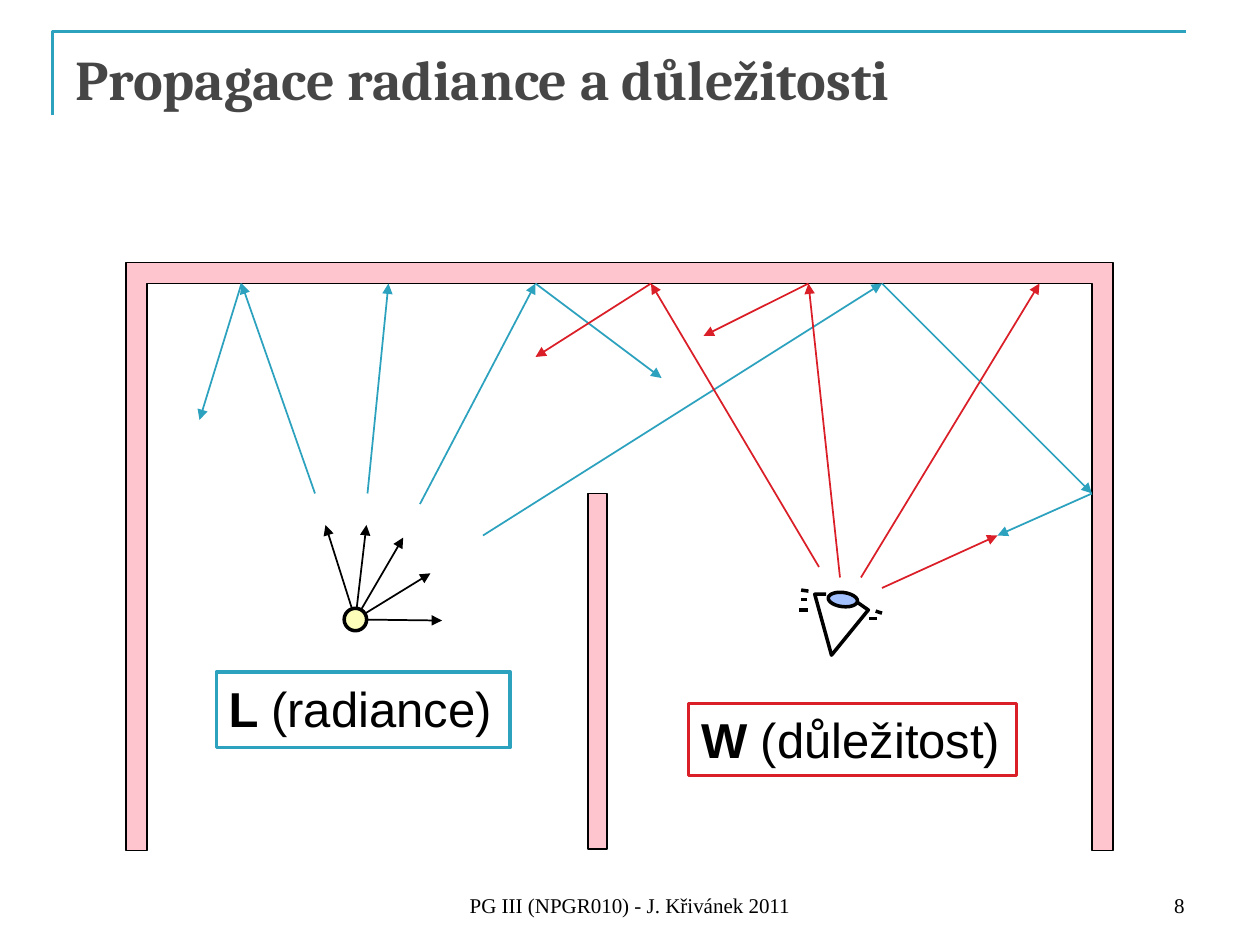
from itertools import pairwise

from lxml.etree import SubElement
from pptx import Presentation
from pptx.dml.color import RGBColor
from pptx.enum.shapes import MSO_CONNECTOR as Connector, MSO_SHAPE as Shape
from pptx.enum.text import MSO_ANCHOR as Anchor, MSO_AUTO_SIZE as AutoSize, PP_ALIGN as Align
from pptx.oxml.ns import qn
from pptx.util import Inches, Pt

COLUMNS, ROWS = 120, 90
WIDTH, HEIGHT = Inches(10), Inches(7.5)
COLORS = {
    "accent": "2DA2BF",
    "importance": "DA1F28",
    "title": "464646",
    "ink": "000000",
    "wall": "FFC5CF",
    "lamp": "FCFEB9",
    "iris": "A2C1FE",
}
RADIANCE_PATHS = [
    [(40, 48), (51, 27), (63, 36)],
    [(35, 47), (37, 27)],
    [(46, 51), (84, 27), (104, 47), (95, 51)],
    [(30, 47), (23, 27), (19, 40)],
]
IMPORTANCE_PATHS = [
    [(82, 55), (99, 27)],
    [(80, 55), (77, 27), (67, 32)],
    [(84, 56), (95, 51)],
    [(78, 54), (62, 27), (51, 34)],
]
ROOM = [(14, 81), (12, 81), (12, 25), (106, 25), (106, 81), (104, 81), (104, 27), (14, 27)]
LAMP = (33.85, 59)
LAMP_TIPS = [(42.1, 59.1), (31, 50), (41, 54.6), (38.4, 51.2), (34.9, 50)]
EYE_CONE = [(78.7, 56.6), (77.6, 56.6), (79.2, 62.4), (82.7, 58.1), (81.7, 57.4)]
EYE_LASHES = [
    [(76.3, 56.2), (77, 56.3)],
    [(76.3, 57.1), (76.9, 57.1)],
    [(76.1, 58.1), (77, 58.1)],
    [(83.4, 58.2), (84, 58.4)],
    [(82.8, 58.9), (83.5, 58.9)],
]


def x(column):
    return round(WIDTH * column / COLUMNS)


def y(row):
    return round(HEIGHT * row / ROWS)


def rgb(name):
    return RGBColor.from_string(COLORS[name])


def paint(figure, fill, line, weight):
    figure.shadow.inherit = False
    if fill:
        figure.fill.solid()
        figure.fill.fore_color.rgb = rgb(fill)
    else:
        figure.fill.background()
    figure.line.color.rgb = rgb(line)
    figure.line.width = Pt(weight)


def add_figure(slide, preset, box, fill, line, weight):
    left, top, width, height = box
    figure = slide.shapes.add_shape(preset, x(left), y(top), x(width), y(height))
    paint(figure, fill, line, weight)
    return figure


def add_outline(slide, points, fill, line, weight, close=False):
    corners = [(x(column), y(row)) for column, row in points]
    builder = slide.shapes.build_freeform(*corners[0])
    builder.add_line_segments(corners[1:], close=close)
    paint(builder.convert_to_shape(), fill, line, weight)


def add_line(slide, start, end, color, weight=1, arrow=True):
    stroke = slide.shapes.add_connector(
        Connector.STRAIGHT, x(start[0]), y(start[1]), x(end[0]), y(end[1])
    )
    stroke.line.color.rgb = rgb(color)
    stroke.line.width = Pt(weight)
    properties = stroke._element.spPr
    if arrow:
        SubElement(properties.find(qn("a:ln")), qn("a:tailEnd"), type="triangle")
    SubElement(properties, qn("a:effectLst"))


def add_paths(slide, paths, color):
    for path in paths:
        for start, end in pairwise(path):
            add_line(slide, start, end, color)


def set_font(paragraph, name, size, color, bold=None):
    font = paragraph.font
    font.name, font.size, font.bold = name, Pt(size), bold
    font.color.rgb = rgb(color)


def add_text(slide, box, text, name, size, color, align=Align.LEFT, anchor=Anchor.TOP, bold=None):
    left, top, width, height = box
    frame = slide.shapes.add_textbox(x(left), y(top), x(width), y(height)).text_frame
    frame.word_wrap = True
    frame.vertical_anchor = anchor
    paragraph = frame.paragraphs[0]
    paragraph.text = text
    paragraph.alignment = align
    set_font(paragraph, name, size, color, bold)


def add_label(slide, box, symbol, meaning, color):
    frame = add_figure(slide, Shape.RECTANGLE, box, None, color, 2).text_frame
    frame.word_wrap = False
    frame.auto_size = AutoSize.SHAPE_TO_FIT_TEXT
    frame.vertical_anchor = Anchor.TOP
    paragraph = frame.paragraphs[0]
    paragraph.alignment = Align.LEFT
    set_font(paragraph, "Arial", 28, "ink")
    for text, bold in ((symbol + " ", True), (meaning, False)):
        run = paragraph.add_run()
        run.text = text
        run.font.bold = bold


def add_eye(slide):
    iris = add_figure(slide, Shape.OVAL, (79.6, 55.7, 1.35, 2.8), "iris", "ink", 2)
    iris.rotation = 277
    add_outline(slide, EYE_CONE, None, "ink", 2)
    for start, end in EYE_LASHES:
        add_line(slide, start, end, "ink", weight=2, arrow=False)


def add_lamp(slide):
    for tip in LAMP_TIPS:
        add_line(slide, LAMP, tip, "ink")
    column, row = LAMP
    add_figure(slide, Shape.OVAL, (column - 1.07, row - 1.07, 2.14, 2.14), "lamp", "ink", 2)


def add_walls(slide):
    add_figure(slide, Shape.RECTANGLE, (56, 47, 1.8, 33.85), "wall", "ink", 1)
    add_outline(slide, ROOM, "wall", "ink", 1, close=True)


def main():
    deck = Presentation()
    deck.slide_width, deck.slide_height = WIDTH, HEIGHT
    slide = deck.slides.add_slide(deck.slide_layouts[6])

    add_outline(slide, [(5, 11), (5, 3), (113, 3)], None, "accent", 1.5)
    add_text(slide, (6, 3.6, 108, 15), "Propagace radiance a důležitosti",
             "Cambria", 32, "title", bold=True)
    add_text(slide, (41, 82, 38, 6), "PG III (NPGR010) - J. Křivánek 2011",
             "Times New Roman", 12, "ink", Align.CENTER, Anchor.BOTTOM)
    add_text(slide, (86, 82, 28, 6), "8",
             "Times New Roman", 12, "ink", Align.RIGHT, Anchor.BOTTOM)

    add_eye(slide)
    add_lamp(slide)
    add_walls(slide)
    add_paths(slide, RADIANCE_PATHS, "accent")
    add_paths(slide, IMPORTANCE_PATHS, "importance")
    add_label(slide, (20.6, 64, 28, 7.2), "L", "(radiance)", "accent")
    add_label(slide, (65.6, 67, 31.2, 6.85), "W", "(důležitost)", "importance")

    deck.save("out.pptx")


if __name__ == "__main__":
    main()
